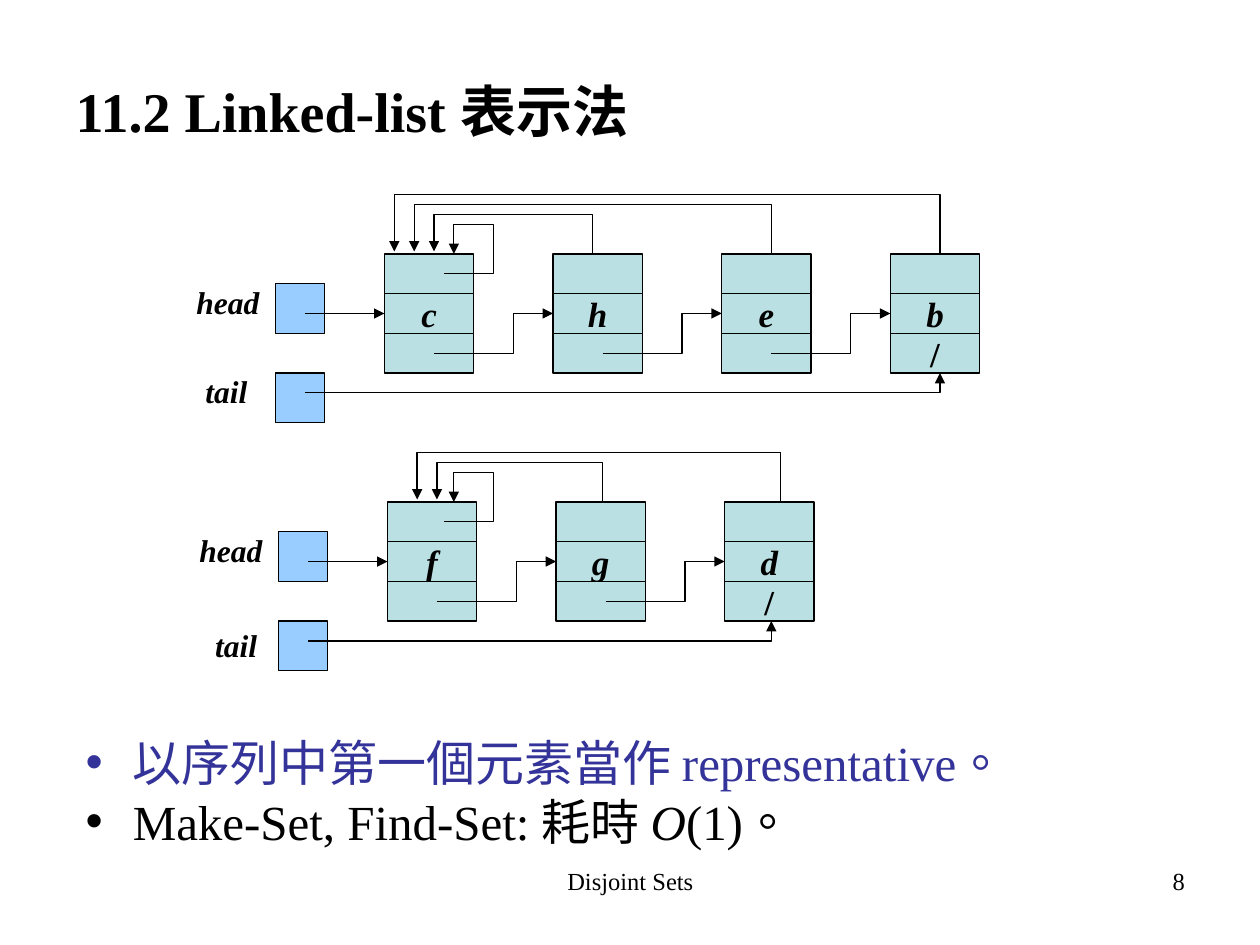
from dataclasses import dataclass

from lxml import etree
from pptx import Presentation
from pptx.dml.color import RGBColor
from pptx.enum.lang import MSO_LANGUAGE_ID
from pptx.enum.shapes import MSO_CONNECTOR, MSO_SHAPE
from pptx.enum.text import MSO_ANCHOR, MSO_AUTO_SIZE, PP_ALIGN
from pptx.oxml.ns import qn
from pptx.util import Cm, Inches, Pt

RECT, STRAIGHT = MSO_SHAPE.RECTANGLE, MSO_CONNECTOR.STRAIGHT
TOP, MIDDLE = MSO_ANCHOR.TOP, MSO_ANCHOR.MIDDLE
LEFT, CENTER, RIGHT = PP_ALIGN.LEFT, PP_ALIGN.CENTER, PP_ALIGN.RIGHT
FIXED, GROW = MSO_AUTO_SIZE.NONE, MSO_AUTO_SIZE.SHAPE_TO_FIT_TEXT
CHINESE = MSO_LANGUAGE_ID.TRADITIONAL_CHINESE

GRID = Cm(0.2)  # side of one grid square
CELL_W, CELL_H = 9, 4  # one field of a node
PITCH = 17  # from one node to the next
POINTER = 5  # side of a head or tail square


@dataclass(frozen=True)
class Theme:
    font: str = "Times New Roman"
    ink: RGBColor = RGBColor(0x00, 0x00, 0x00)
    accent: RGBColor = RGBColor(0x33, 0x33, 0x99)
    node: RGBColor = RGBColor(0xBB, 0xE0, 0xE3)
    pointer: RGBColor = RGBColor(0x99, 0xCC, 0xFF)
    title: int = 32
    body: int = 28
    key: int = 20
    label: int = 18
    footer: int = 14
    line: float = 0.75


class Deck:
    """Style, current slide and a movable grid origin."""

    def __init__(self, prs, theme):
        self.theme = theme
        self.s = prs.slides.add_slide(prs.slide_layouts[1])
        self.move(0, 0)

    def move(self, col, row):
        self.col, self.row = col, row

    def point(self, col, row):
        return round((self.col + col) * GRID), round((self.row + row) * GRID)

    def place(self, sp, col, row, w, h):
        sp.left, sp.top = self.point(col, row)
        sp.width, sp.height = round(w * GRID), round(h * GRID)

    def style(self, p, size, color=None, bold=False, italic=False, align=LEFT):
        p.alignment = align
        p.font.name, p.font.size = self.theme.font, Pt(size)
        p.font.bold, p.font.italic = bold, italic
        p.font.color.rgb = color or self.theme.ink

    def outline(self, sp, arrow=False):
        sp.line.color.rgb, sp.line.width = self.theme.ink, Pt(self.theme.line)
        if arrow:
            ln = sp._element.spPr.find(qn("a:ln"))
            etree.SubElement(ln, qn("a:tailEnd"), type="triangle")

    def title(self, text, *area):
        sp = self.s.shapes.title
        self.place(sp, *area)
        tf = sp.text_frame
        tf.text, tf.vertical_anchor, tf.auto_size = text, TOP, FIXED
        self.style(tf.paragraphs[0], self.theme.title, bold=True)

    def bullets(self, items, *area):
        """Each item is a colour and a list of (text, italic) runs."""
        sp = self.s.placeholders[1]
        self.place(sp, *area)
        tf = sp.text_frame
        tf.auto_size = FIXED
        for i, (color, runs) in enumerate(items):
            p = tf.add_paragraph() if i else tf.paragraphs[0]
            self.style(p, self.theme.body, color)
            if i:
                p.space_before = Pt(0)
            for text, italic in runs:
                r = p.add_run()
                r.text, r.font.language_id = text, CHINESE
                if italic:
                    r.font.italic = True

    def text(self, text, *area, wrap=True, **style):
        sp = self.s.shapes.add_textbox(0, 0, 0, 0)
        self.place(sp, *area)
        tf = sp.text_frame
        tf.text, tf.word_wrap = text, wrap
        tf.auto_size = FIXED if wrap else GROW
        self.style(tf.paragraphs[0], **style)

    def box(self, fill, *area, text=""):
        sp = self.s.shapes.add_shape(RECT, 0, 0, 0, 0)
        self.place(sp, *area)
        sp.shadow.inherit = False
        sp.fill.solid()
        sp.fill.fore_color.rgb = fill
        self.outline(sp)
        if text:
            tf = sp.text_frame
            tf.text, tf.word_wrap, tf.vertical_anchor = text, False, MIDDLE
            self.style(tf.paragraphs[0], self.theme.key, bold=True,
                       italic=text.isalpha(), align=CENTER)

    def arrow(self, start, end):
        sp = self.s.shapes.add_connector(STRAIGHT, *self.point(*start), *self.point(*end))
        self.outline(sp, arrow=True)
        etree.SubElement(sp._element.spPr, qn("a:effectLst"))

    def elbow(self, *points):
        first, *rest = [self.point(*pt) for pt in points]
        fb = self.s.shapes.build_freeform(*first)
        fb.add_line_segments(rest, close=False)
        sp = fb.convert_to_shape()
        sp.fill.background()
        sp.shadow.inherit = False
        self.outline(sp, arrow=True)

    def linked_list(self, keys, back_cols, loop_col, tail_col, labels):
        t = self.theme
        # Links back to the first node, lying under the nodes
        for i, col in enumerate(back_cols):
            top, end = -4 - i, 5 - 2 * i
            self.elbow((col, 1), (col, top), (end, top), (end, -0.25))
        # Nodes of three fields
        for i, key in enumerate(keys):
            fields = ("", key, "/" if i == len(keys) - 1 else "")
            for j, text in enumerate(fields):
                self.box(t.node, i * PITCH, j * CELL_H, CELL_W, CELL_H, text=text)
        # Links to the next node
        for x in range(0, (len(keys) - 1) * PITCH, PITCH):
            self.elbow((x + 5, 10), (x + 13, 10), (x + 13, 6), (x + PITCH, 6))
        # Link from the first node to itself
        right, end = loop_col + 5, loop_col + 1
        self.elbow((loop_col, 2), (right, 2), (right, -3), (end, -3), (end, 0))
        # Head and tail pointers
        for row in (3, 12):
            self.box(t.pointer, -11, row, POINTER, POINTER)
        self.arrow((-8, 6), (0, 6))
        self.elbow((-8, 14), (tail_col, 14), (tail_col, 12))
        for text, col, row, w in labels:
            self.text(text, col, row, w, 5.1, wrap=False, size=t.label,
                      bold=True, italic=True)


def main():
    prs = Presentation()
    prs.slide_width, prs.slide_height = Inches(10), Inches(7.5)
    theme = Theme()
    deck = Deck(prs, theme)

    # Title and list
    deck.title("11.2 Linked-list 表示法", 6.35, 7.1, 114.2, 10.2)
    deck.bullets([
        (theme.accent, [("以序列中第一個元素當作 representative。", False)]),
        (theme.ink, [("Make-Set, Find-Set: 耗時 ", False), ("O", True), ("(1)。", False)]),
    ], 7.35, 73.2, 114.2, 16.5)

    # Footer
    deck.text("Disjoint Sets", 43.4, 86.7, 40.3, 6.6, size=theme.footer, align=CENTER)
    deck.text("8", 91.1, 86.7, 29.6, 6.6, size=theme.footer, align=RIGHT)

    # The two sets, with labels wide enough for one line
    deck.move(38.75, 25.6)
    deck.linked_list("cheb", (21, 39, 56), 6, 56,
                     [("head", -20.2, 2.3, 8.9), ("tail", -19.3, 11.3, 7.8)])
    deck.move(39.05, 50.6)
    deck.linked_list("fgd", (21.7, 39.6), 5.7, 38.7,
                     [("head", -20.2, 2.3, 8.9), ("tail", -18.6, 11.9, 7.8)])

    prs.save("out.pptx")


if __name__ == "__main__":
    main()
